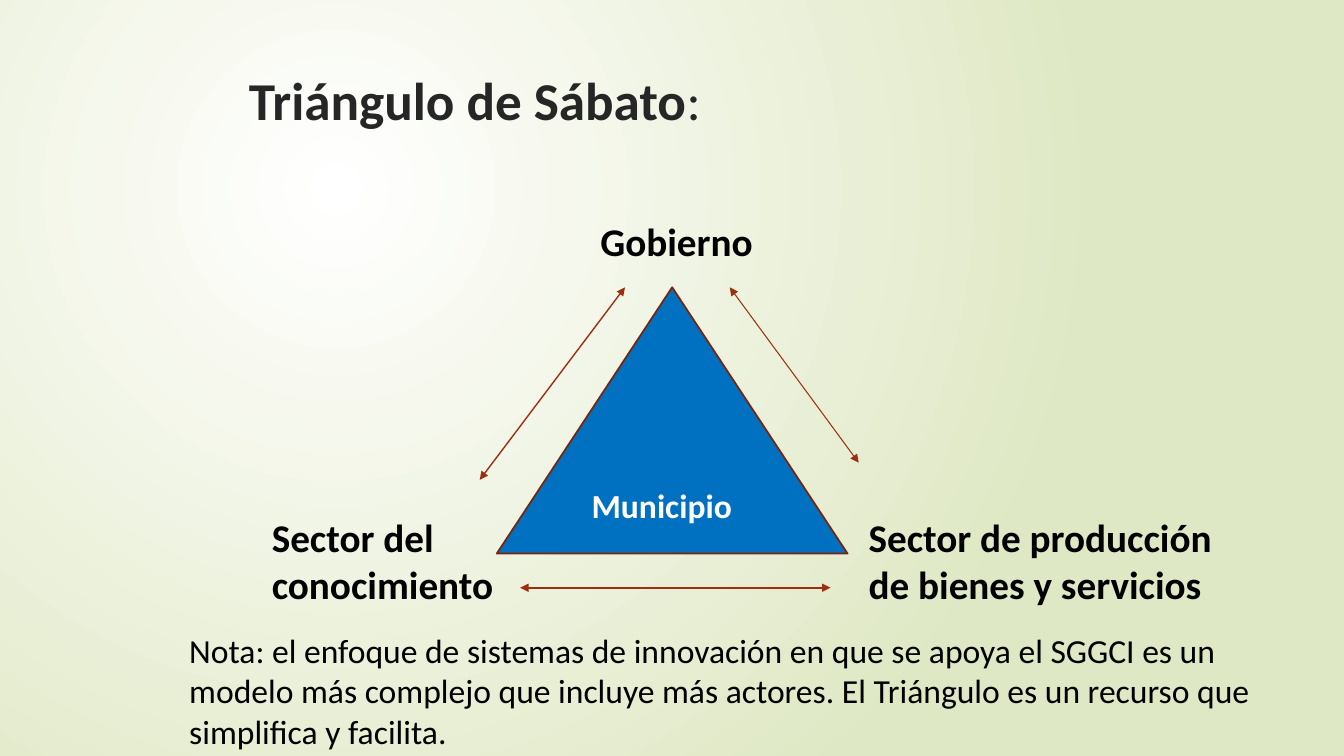
from lxml import etree
from pptx import Presentation
from pptx.dml.color import RGBColor
from pptx.enum.shapes import MSO_CONNECTOR, MSO_SHAPE
from pptx.oxml.ns import qn
from pptx.util import Cm, Pt

STRAIGHT = MSO_CONNECTOR.STRAIGHT
TRIANGLE = MSO_SHAPE.ISOSCELES_TRIANGLE

FONT = "Calibri"
WHITE = RGBColor(0xFF, 0xFF, 0xFF)
BLACK = RGBColor(0, 0, 0)
CHARCOAL = RGBColor(0x26, 0x26, 0x26)
PALE_GREEN = RGBColor(0xDF, 0xE8, 0xC4)
BLUE = RGBColor(0, 0x70, 0xC0)
DARK_RUST = RGBColor(0x7A, 0x24, 0x0C)
RUST = RGBColor(0x9E, 0x2E, 0x0F)

# Boxes are left, top, width, height in centimetres
TITLE = ("Triángulo de Sábato", ":")
TITLE_BOX = (6.02, 1.57, 28, 4.4)
NOTE = (
    "Nota: el enfoque de sistemas de innovación en que se apoya el SGGCI es un "
    "modelo más complejo que incluye más actores. El Triángulo es un recurso "
    "que simplifica y facilita."
)
NOTE_BOX = (4.52, 15.75, 28.75, 3.33)
ACTORS = [
    ("Gobierno", (14.88, 5.36, 4.5, 1.45)),
    ("Sector de producción de bienes y servicios", (21.64, 12.8, 9.42, 2.64)),
    ("Sector del conocimiento", (6.6, 12.8, 6.5, 2.64)),
]
TOWN = "Municipio"
TOWN_BOX = (14.66, 12.09, 5, 1.27)
TRIANGLE_BOX = (12.52, 7.24, 8.84, 6.71)
# Start point, end point, width in points
EXCHANGES = [
    ((12.09, 12.09), (15.75, 7.24), 1),
    ((18.39, 7.24), (21.64, 11.66), 0.75),
    ((13.11, 14.81), (20.93, 14.81), 1.5),
]


def cm(values):
    return [Cm(value) for value in values]


def add_text(slide, text, box, size=28, color=BLACK, bold=True, plain_tail=""):
    """Add a wrapped text box; plain_tail follows the text without bold."""
    frame = slide.shapes.add_textbox(*cm(box)).text_frame
    frame.word_wrap = True
    paragraph = frame.paragraphs[0]
    for part, weight in ((text, bold), (plain_tail, False)):
        if part:
            run = paragraph.add_run()
            run.text = part
            run.font.name = FONT
            run.font.size = Pt(size)
            run.font.bold = weight
            run.font.color.rgb = color


def paint_background(slide):
    """Fill the slide with a radial gradient centred towards the upper left."""
    fill = slide.background.fill
    fill.gradient()
    for stop, color in zip(fill.gradient_stops, (WHITE, PALE_GREEN)):
        stop.color.rgb = color
    linear = slide.element.find(".//" + qn("a:lin"))
    gradient = linear.getparent()
    radial = etree.Element(qn("a:path"), {"path": "circle"})
    etree.SubElement(radial, qn("a:fillToRect"),
                     {"l": "50000", "t": "50000", "r": "100000", "b": "100000"})
    gradient.replace(linear, radial)


def add_exchange(slide, start, end, width):
    """Add a double-headed arrow."""
    arrow = slide.shapes.add_connector(STRAIGHT, *cm(start + end))
    arrow.line.color.rgb = RUST
    arrow.line.width = Pt(width)
    outline = arrow.line._get_or_add_ln()
    for tag in ("a:headEnd", "a:tailEnd"):
        etree.SubElement(outline, qn(tag), {"type": "triangle"})
    etree.SubElement(outline.getparent(), qn("a:effectLst"))


def main():
    deck = Presentation()
    deck.slide_width, deck.slide_height = Cm(33.87), Cm(19.05)
    slide = deck.slides.add_slide(deck.slide_layouts[6])
    paint_background(slide)

    add_text(slide, TITLE[0], TITLE_BOX, size=38, color=CHARCOAL, plain_tail=TITLE[1])
    add_text(slide, NOTE, NOTE_BOX, size=24, bold=False)
    for actor, box in ACTORS:
        add_text(slide, actor, box)

    triangle = slide.shapes.add_shape(TRIANGLE, *cm(TRIANGLE_BOX))
    triangle.shadow.inherit = False
    triangle.fill.solid()
    triangle.fill.fore_color.rgb = BLUE
    triangle.line.color.rgb = DARK_RUST
    triangle.line.width = Pt(1.25)

    for start, end, width in EXCHANGES:
        add_exchange(slide, start, end, width)
    add_text(slide, TOWN, TOWN_BOX, size=24, color=WHITE)

    deck.save("out.pptx")


if __name__ == "__main__":
    main()
